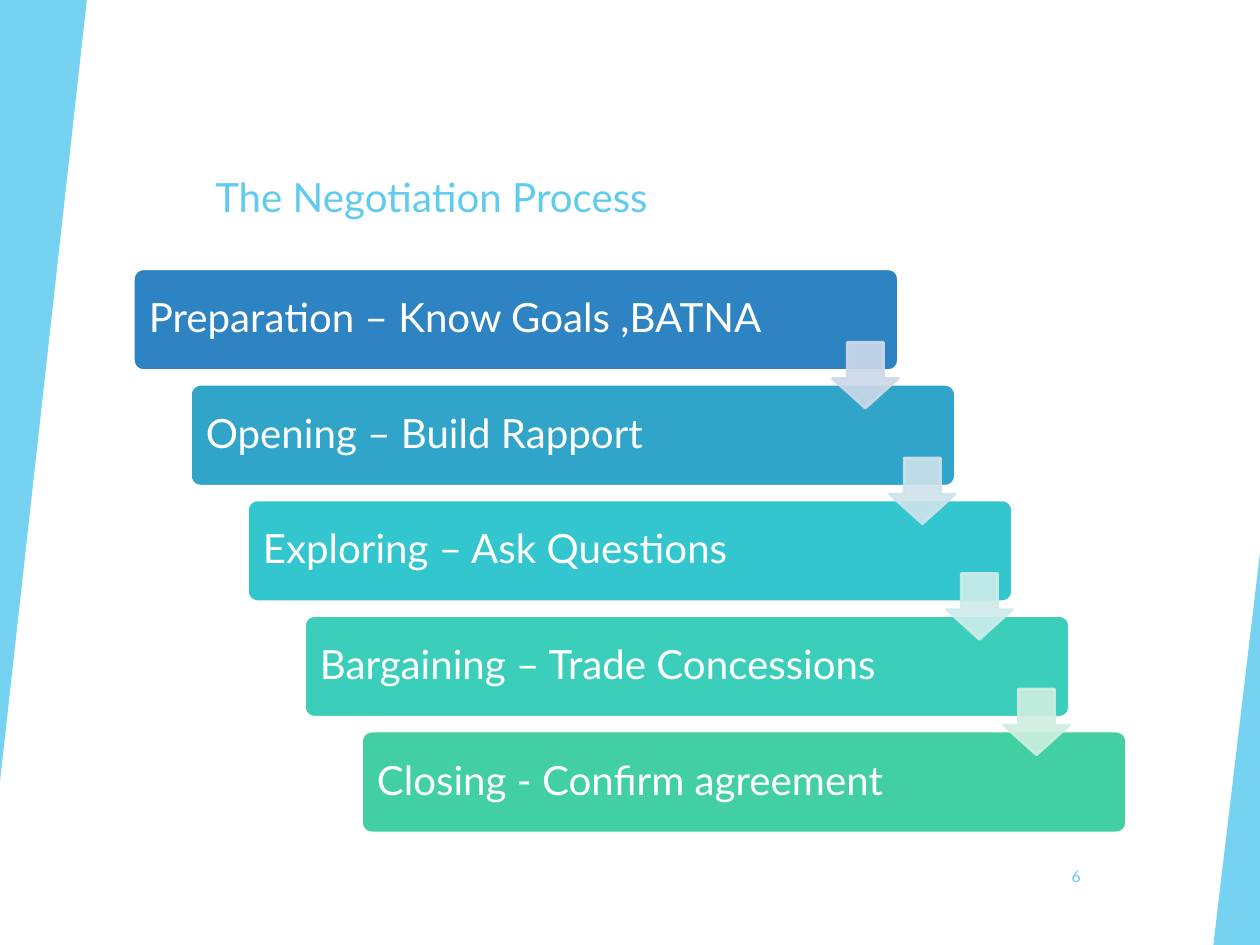
import pptx
import pptx.dml.color
import pptx.enum.shapes
import pptx.enum.text
import pptx.oxml
import pptx.oxml.ns
import pptx.util
from pptx.util import Cm

SHAPE = pptx.enum.shapes.MSO_SHAPE
ANCHOR = pptx.enum.text.MSO_ANCHOR
ALIGN = pptx.enum.text.PP_ALIGN

FONT = "Lato"
SKY = "5FCBEF"
WHITE = "FFFFFF"

STEPS = [
    ("Preparation – Know Goals ,BATNA", "2E83C3"),
    ("Opening – Build Rapport", "30A4C9"),
    ("Exploring – Ask Questions", "34C6CE"),
    ("Bargaining – Trade Concessions", "3BCFBB"),
    ("Closing - Confirm agreement", "42D0A2"),
]
ARROW_COLOURS = ["CDD9E9", "CEE3EB", "CEECEA", "CFEEE0"]
STEP_RIGHT, STEP_DOWN = 1.15, 2.33


def paint(format_part, colour, opacity=100):
    """Give a fill a solid colour with an opacity in percent."""
    format_part.solid()
    format_part.fore_color.rgb = pptx.dml.color.RGBColor.from_string(colour)
    if opacity < 100:
        colour_element = format_part.fore_color._xFill[0]
        alpha = pptx.oxml.parse_xml(
            f'<a:alpha {pptx.oxml.ns.nsdecls("a")} val="{opacity * 1000}"/>')
        colour_element.append(alpha)


def add_shape(slide, kind, place, colour, opacity=100, outline=None, adjustments=()):
    shape = slide.shapes.add_shape(kind, *(Cm(length) for length in place))
    shape.shadow.inherit = False
    for index, value in enumerate(adjustments):
        shape.adjustments[index] = value
    paint(shape.fill, colour, opacity)
    if outline:
        paint(shape.line.fill, outline, opacity)
        shape.line.width = pptx.util.Pt(1.5)
    else:
        shape.line.fill.background()
    return shape


def write_text(box, text, size, colour, align=ALIGN.LEFT, anchor=ANCHOR.MIDDLE):
    frame = box.text_frame
    frame.word_wrap = True
    frame.auto_size = pptx.enum.text.MSO_AUTO_SIZE.NONE
    frame.vertical_anchor = anchor
    para = frame.paragraphs[0]
    para.alignment = align
    para.line_spacing = 0.9
    para.space_before = pptx.util.Pt(0)
    span = para.add_run()
    span.text = text
    span.font.name = FONT
    span.font.size = pptx.util.Pt(size)
    span.font.color.rgb = pptx.dml.color.RGBColor.from_string(colour)


def add_title(slide, text):
    title = slide.shapes.title
    title.left, title.top, title.width, title.height = Cm(2.69), Cm(1.7), Cm(21.23), Cm(3.05)
    title.text_frame.margin_left = Cm(1.65)
    title.text_frame.margin_bottom = Cm(0.3)
    write_text(title, text, 23, SKY, anchor=ANCHOR.BOTTOM)


def add_side_wedges(slide):
    left = add_shape(slide, SHAPE.ISOSCELES_TRIANGLE, (0, 0, 1.75, 15.75), SKY, 85,
                     adjustments=[1])
    left.rotation = 180
    add_shape(slide, SHAPE.ISOSCELES_TRIANGLE, (24.46, 11.15, 0.94, 7.9), SKY, 85,
              adjustments=[1])


def add_step(slide, index, text, colour):
    place = (2.69 + index * STEP_RIGHT, 5.42 + index * STEP_DOWN, 15.42, 2.05)
    step = add_shape(slide, SHAPE.ROUNDED_RECTANGLE, place, colour,
                     outline=WHITE, adjustments=[0.1])
    step.text_frame.margin_left = Cm(0.25)
    write_text(step, text, 23, WHITE)


def add_step_arrow(slide, index, colour):
    place = (16.78 + index * STEP_RIGHT, 6.9 + index * STEP_DOWN, 1.33, 1.33)
    add_shape(slide, SHAPE.DOWN_ARROW, place, colour, 90,
              outline=colour, adjustments=[0.55, 0.45])


def add_page_number(slide, number):
    box = slide.shapes.add_textbox(Cm(20.62), Cm(17.17), Cm(1.42), Cm(1.02))
    write_text(box, number, 9, SKY, align=ALIGN.RIGHT)


def main():
    deck = pptx.Presentation()
    deck.slide_width, deck.slide_height = Cm(25.4), Cm(19.05)
    slide = deck.slides.add_slide(deck.slide_layouts[5])
    paint(slide.background.fill, WHITE)
    add_title(slide, "The Negotiation Process")
    add_side_wedges(slide)
    add_page_number(slide, "6")
    for index, (text, colour) in enumerate(STEPS):
        add_step(slide, index, text, colour)
    for index, colour in enumerate(ARROW_COLOURS):
        add_step_arrow(slide, index, colour)
    deck.save("out.pptx")


if __name__ == "__main__":
    main()
